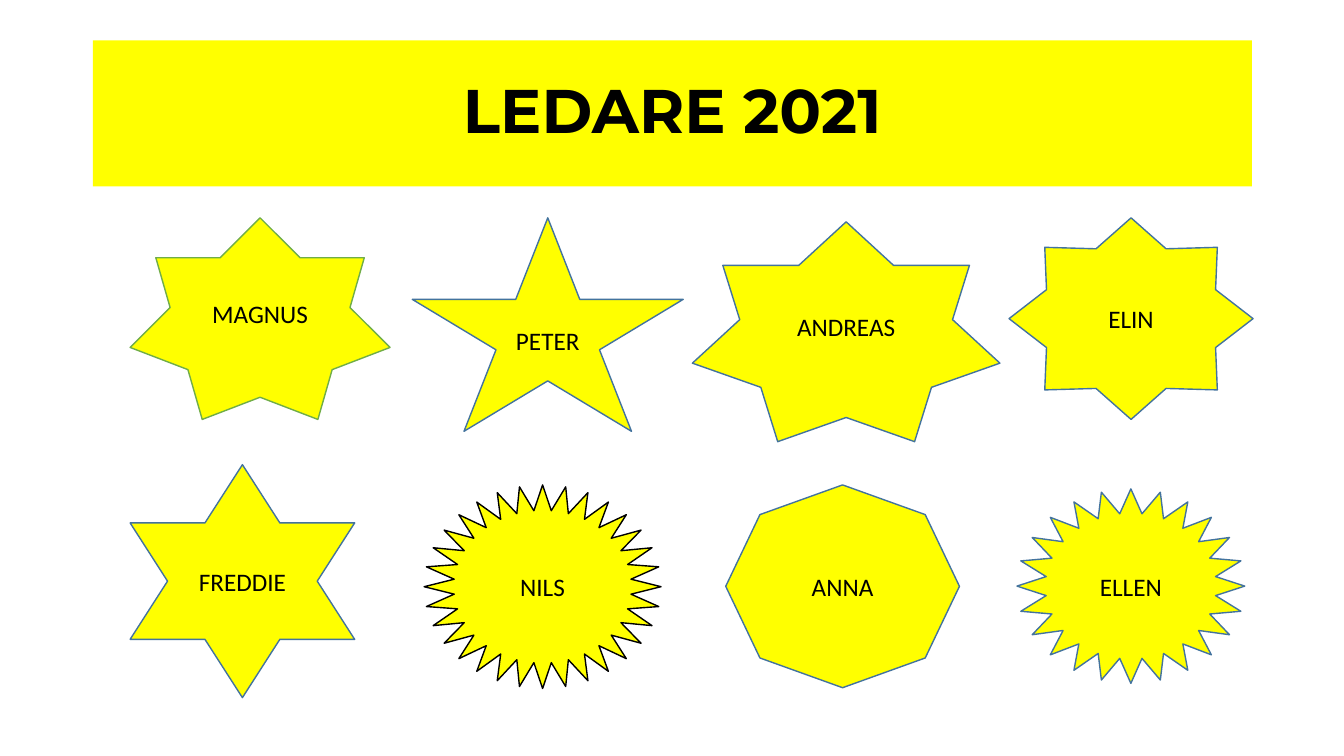
from dataclasses import dataclass

import pptx
import pptx.dml.color
import pptx.enum.shapes
import pptx.enum.text
import pptx.util

Cm = pptx.util.Cm
Pt = pptx.util.Pt
Star = pptx.enum.shapes.MSO_SHAPE

COLOURS = {"yellow": "FFFF00", "black": "000000", "blue": "43739E", "green": "70AD47"}


@dataclass
class Leader:
    """A leader's name in a star; lengths in centimetres."""
    name: str
    star: Star
    left: float
    top: float
    width: float
    height: float
    outline: str = "blue"
    point_depth: float | None = None


LEADERS = [
    Leader("MAGNUS", Star.STAR_7_POINT, 3.28, 5.49, 6.55, 5.08, outline="green"),
    Leader("PETER", Star.STAR_5_POINT, 10.39, 5.49, 6.83, 5.38),
    Leader("ANDREAS", Star.STAR_7_POINT, 17.45, 5.59, 7.75, 5.54),
    Leader("ELIN", Star.STAR_8_POINT, 25.43, 5.49, 6.15, 5.08),
    Leader("FREDDIE", Star.STAR_6_POINT, 3.28, 11.71, 5.66, 5.87),
    Leader("NILS", Star.STAR_32_POINT, 10.69, 12.22, 5.97, 5.13, outline="black"),
    Leader("ANNA", Star.STAR_4_POINT, 18.29, 12.22, 5.89, 5.11, point_depth=0.5),
    Leader("ELLEN", Star.STAR_24_POINT, 25.63, 12.32, 5.74, 4.9),
]


def colour(name: str) -> pptx.dml.color.RGBColor:
    return pptx.dml.color.RGBColor.from_string(COLOURS[name])


def fill_yellow(shape) -> None:
    shape.fill.solid()
    shape.fill.fore_color.rgb = colour("yellow")


def write_centred(shape, text: str, font_name: str, size: float, bold: bool) -> None:
    frame = shape.text_frame
    frame.text = text
    frame.word_wrap = True
    frame.auto_size = pptx.enum.text.MSO_AUTO_SIZE.NONE
    frame.vertical_anchor = pptx.enum.text.MSO_ANCHOR.MIDDLE
    paragraph = frame.paragraphs[0]
    paragraph.alignment = pptx.enum.text.PP_ALIGN.CENTER
    font = paragraph.runs[0].font
    font.name = font_name
    font.size = Pt(size)
    font.bold = bold
    font.color.rgb = colour("black")


def draw_heading(slide) -> None:
    heading = slide.shapes.title
    heading.left, heading.top = Cm(2.34), Cm(1.02)
    heading.width, heading.height = Cm(29.21), Cm(3.68)
    fill_yellow(heading)
    write_centred(heading, "LEDARE 2021", "Montserrat", 44, bold=True)
    heading.text_frame.paragraphs[0].line_spacing = 0.9


def draw_leader(slide, leader: Leader) -> None:
    star = slide.shapes.add_shape(
        leader.star, Cm(leader.left), Cm(leader.top), Cm(leader.width), Cm(leader.height)
    )
    if leader.point_depth is not None:
        star.adjustments[0] = leader.point_depth
    star.shadow.inherit = False
    fill_yellow(star)
    star.line.color.rgb = colour(leader.outline)
    star.line.width = Pt(1)
    write_centred(star, leader.name, "Calibri", 18, bold=False)


def main() -> None:
    presentation = pptx.Presentation()
    presentation.slide_width = Cm(33.87)
    presentation.slide_height = Cm(19.05)
    title_only = presentation.slide_layouts[5]
    slide = presentation.slides.add_slide(title_only)

    # Heading band
    draw_heading(slide)

    # Leaders in two rows of stars
    for leader in LEADERS:
        draw_leader(slide, leader)

    presentation.save("out.pptx")


if __name__ == "__main__":
    main()
